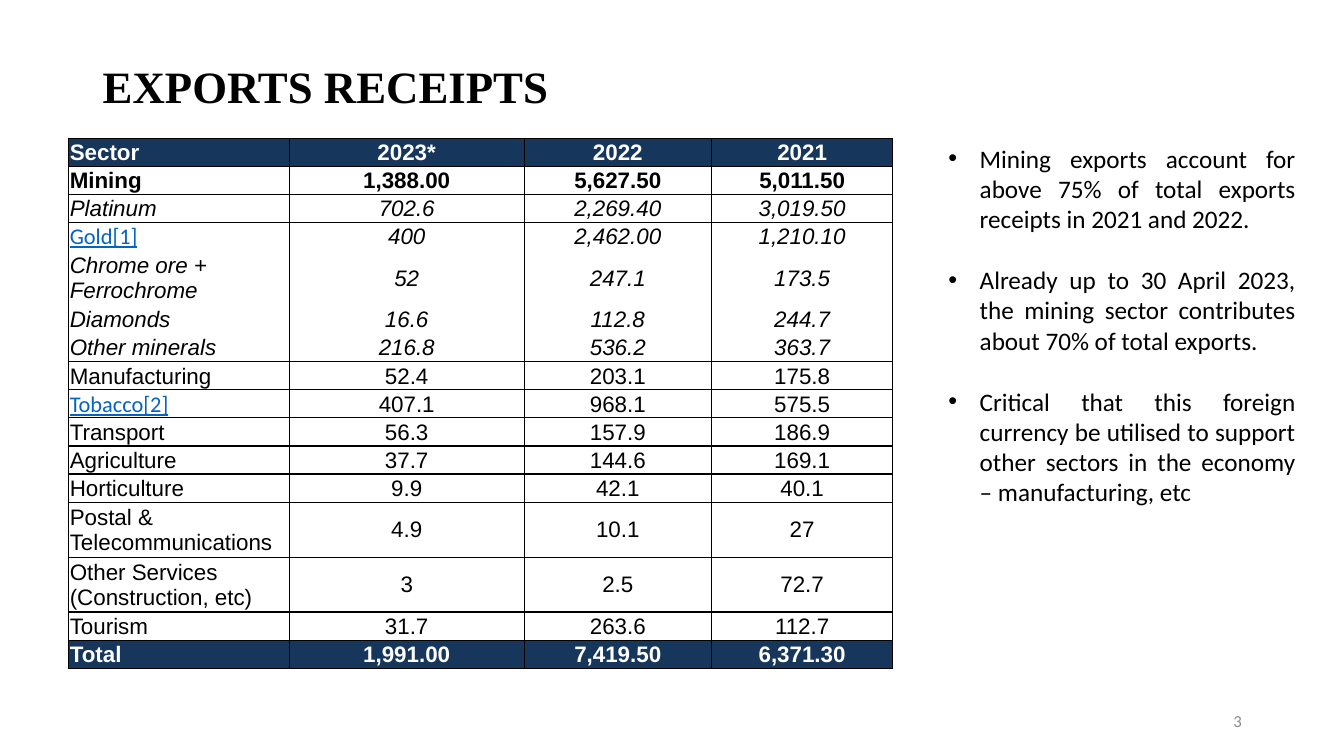
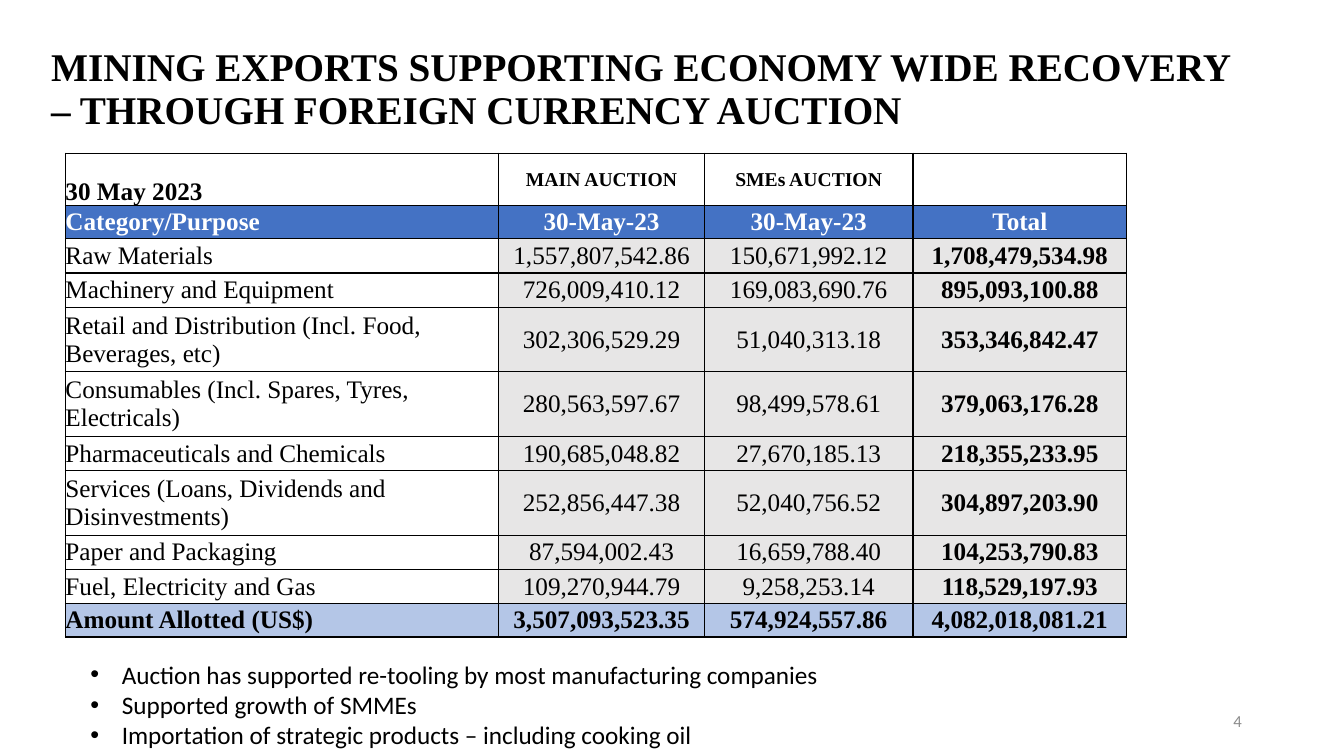
"""Build two slides on export receipts and the foreign currency auction."""
from dataclasses import dataclass, replace
from functools import partial
from typing import NamedTuple, Optional

from lxml.etree import SubElement
from pptx import Presentation
from pptx.dml.color import RGBColor
from pptx.enum.text import MSO_ANCHOR as Anchor, PP_ALIGN as Align
from pptx.oxml.ns import qn
from pptx.util import Cm, Pt

BLACK, WHITE, GREY = "000000", "FFFFFF", "8C8C8C"
NAVY, BLUE, PALE_BLUE, PALE_GREY, LINK = "16365C", "4472C4", "B4C6E7", "E7E6E6", "0563C1"
SERIF, SANS, BODY = "Times New Roman", "Arial", "Calibri"
NO_TABLE_STYLE = "{2D5ABB26-0587-4C30-8999-92F81FD0307C}"


@dataclass(frozen=True)
class Style:
    font: str
    size: int
    color: str = BLACK
    bold: bool = False
    italic: bool = False
    underline: bool = False
    fill: Optional[str] = None
    anchor: Anchor = Anchor.MIDDLE


class Box(NamedTuple):
    left: float
    top: float
    width: float
    height: float


class Row(NamedTuple):
    label: str
    values: tuple[str, ...]
    height: float
    style: Style
    label_style: Optional[Style] = None
    last_style: Optional[Style] = None
    edges: str = "LRTB"


class TableLayout(NamedTuple):
    left: float
    top: float
    columns: tuple[float, ...]
    inset: float
    rows: tuple[Row, ...]


PAGE_NUMBER_BOX = Box(23.93, 17.65, 7.62, 1.02)
PAGE_NUMBER = Style(BODY, 12, GREY)
BULLET = Style(BODY, 18, anchor=Anchor.TOP)

SECTOR = Style(SANS, 16)
SECTOR_BAND = replace(SECTOR, color=WHITE, bold=True, fill=NAVY)
MINERAL = replace(SECTOR, italic=True)
FOOTNOTE_LABEL = Style(BODY, 16, LINK, underline=True)
SINGLE, DOUBLE = 0.62, 1.14
sector = partial(Row, height=SINGLE, style=SECTOR)
sector_band = partial(sector, style=SECTOR_BAND)
mineral = partial(sector, style=MINERAL, edges="LR")

EXPORTS = TableLayout(1.73, 3.48, (5.56, 5.92, 4.72, 4.57), 0.03, (
    sector_band("Sector", ("2023*", "2022", "2021")),
    sector("Mining", ("1,388.00", "5,627.50", "5,011.50"), style=replace(SECTOR, bold=True)),
    mineral("Platinum", ("702.6", "2,269.40", "3,019.50"), edges="LRT"),
    mineral("Gold[1]", ("400", "2,462.00", "1,210.10"), label_style=FOOTNOTE_LABEL),
    mineral("Chrome ore + Ferrochrome", ("52", "247.1", "173.5"), height=DOUBLE),
    mineral("Diamonds", ("16.6", "112.8", "244.7")),
    mineral("Other minerals", ("216.8", "536.2", "363.7"), edges="LRB"),
    sector("Manufacturing", ("52.4", "203.1", "175.8")),
    sector("Tobacco[2]", ("407.1", "968.1", "575.5"), label_style=FOOTNOTE_LABEL),
    sector("Transport", ("56.3", "157.9", "186.9")),
    sector("Agriculture", ("37.7", "144.6", "169.1")),
    sector("Horticulture", ("9.9", "42.1", "40.1")),
    sector("Postal & Telecommunications", ("4.9", "10.1", "27"), height=DOUBLE),
    sector("Other Services (Construction, etc)", ("3", "2.5", "72.7"), height=DOUBLE),
    sector("Tourism", ("31.7", "263.6", "112.7")),
    sector_band("Total", ("1,991.00", "7,419.50", "6,371.30")),
))

PURPOSE = Style(SERIF, 18)
AMOUNT = replace(PURPOSE, fill=PALE_GREY)
HEADING = replace(PURPOSE, bold=True)
purpose = partial(Row, height=0.86, style=AMOUNT, label_style=PURPOSE,
                  last_style=replace(AMOUNT, bold=True))
long_purpose = partial(purpose, height=1.63)

AUCTION = TableLayout(1.65, 3.86, (10.92, 5.18, 5.26, 5.38), 0, (
    Row("30 May 2023", ("MAIN AUCTION", "SMEs AUCTION", ""), 1.32,
        replace(HEADING, size=14, fill=WHITE), replace(HEADING, anchor=Anchor.BOTTOM)),
    Row("Category/Purpose", ("30-May-23", "30-May-23", "Total"), 0.84,
        replace(HEADING, color=WHITE, fill=BLUE)),
    purpose("Raw Materials", ("1,557,807,542.86", "150,671,992.12", "1,708,479,534.98")),
    purpose("Machinery and Equipment", ("726,009,410.12", "169,083,690.76", "895,093,100.88")),
    long_purpose("Retail and Distribution (Incl. Food, Beverages, etc)",
                 ("302,306,529.29", "51,040,313.18", "353,346,842.47")),
    long_purpose("Consumables (Incl. Spares, Tyres, Electricals)",
                 ("280,563,597.67", "98,499,578.61", "379,063,176.28")),
    purpose("Pharmaceuticals and Chemicals",
            ("190,685,048.82", "27,670,185.13", "218,355,233.95")),
    long_purpose("Services (Loans, Dividends and Disinvestments)",
                 ("252,856,447.38", "52,040,756.52", "304,897,203.90")),
    purpose("Paper and Packaging", ("87,594,002.43", "16,659,788.40", "104,253,790.83")),
    purpose("Fuel, Electricity and Gas", ("109,270,944.79", "9,258,253.14", "118,529,197.93")),
    Row("Amount Allotted (US$)", ("3,507,093,523.35", "574,924,557.86", "4,082,018,081.21"),
        0.84, replace(HEADING, fill=PALE_BLUE)),
))


def rgb(color: str) -> RGBColor:
    return RGBColor.from_string(color)


def add_run(paragraph, text: str, style: Style) -> None:
    run = paragraph.add_run()
    run.text = text
    font = run.font
    font.name, font.size = style.font, Pt(style.size)
    font.bold, font.italic, font.underline = style.bold, style.italic, style.underline
    font.color.rgb = rgb(style.color)


def add_text_frame(slide, box: Box, anchor: Anchor):
    text_frame = slide.shapes.add_textbox(*map(Cm, box)).text_frame
    text_frame.word_wrap = True
    text_frame.vertical_anchor = anchor
    return text_frame


def add_line(slide, box: Box, text: str, style: Style, align: Align = Align.LEFT,
             line_spacing: float = 1.0) -> None:
    paragraph = add_text_frame(slide, box, style.anchor).paragraphs[0]
    paragraph.alignment, paragraph.line_spacing = align, line_spacing
    add_run(paragraph, text, style)


def add_bullets(slide, box: Box, texts: tuple[str, ...], align: Align = Align.LEFT,
                gap: int = 0) -> None:
    text_frame = add_text_frame(slide, box, BULLET.anchor)
    for index, text in enumerate(texts):
        paragraph = text_frame.add_paragraph() if index else text_frame.paragraphs[0]
        paragraph.alignment = align
        paragraph.space_before = Pt(gap if index else 0)
        properties = paragraph._p.get_or_add_pPr()
        properties.set("marL", str(Cm(0.79)))
        properties.set("indent", str(Cm(-0.79)))
        SubElement(properties, qn("a:buFont"), typeface=SANS)
        SubElement(properties, qn("a:buChar"), char="•")
        add_run(paragraph, text, BULLET)


def add_borders(cell, edges: str) -> None:
    properties = cell._tc.get_or_add_tcPr()
    for edge in edges:
        line = SubElement(properties, qn(f"a:ln{edge}"), w=str(Pt(1)))
        SubElement(SubElement(line, qn("a:solidFill")), qn("a:srgbClr"), val=BLACK)


def fill_cell(cell, text: str, style: Style, align: Align, edges: str, inset: float) -> None:
    cell.margin_left = cell.margin_right = cell.margin_top = Cm(inset)
    cell.margin_bottom = Cm(0)
    cell.vertical_anchor = style.anchor
    add_borders(cell, edges)
    if style.fill:
        cell.fill.solid()
        cell.fill.fore_color.rgb = rgb(style.fill)
    else:
        cell.fill.background()
    paragraph = cell.text_frame.paragraphs[0]
    paragraph.alignment = align
    if text:
        add_run(paragraph, text, style)


def add_data_table(slide, layout: TableLayout) -> None:
    height = sum(row.height for row in layout.rows)
    table = slide.shapes.add_table(
        len(layout.rows), len(layout.columns),
        Cm(layout.left), Cm(layout.top), Cm(sum(layout.columns)), Cm(height)).table
    table.first_row = table.horz_banding = False
    table._tbl.tblPr.find(qn("a:tableStyleId")).text = NO_TABLE_STYLE
    for column, width in zip(table.columns, layout.columns):
        column.width = Cm(width)
    last = len(layout.columns) - 1
    for row_index, row in enumerate(layout.rows):
        table.rows[row_index].height = Cm(row.height)
        special = {0: row.label_style, last: row.last_style}
        for column_index, text in enumerate((row.label, *row.values)):
            fill_cell(table.cell(row_index, column_index), text,
                      special.get(column_index) or row.style,
                      Align.CENTER if column_index else Align.LEFT, row.edges, layout.inset)


def add_page(presentation, number: int, title: str, title_box: Box, title_size: int,
             layout: TableLayout):
    slide = presentation.slides.add_slide(presentation.slide_layouts[6])
    add_line(slide, title_box, title, Style(SERIF, title_size, bold=True), line_spacing=0.9)
    add_data_table(slide, layout)
    add_line(slide, PAGE_NUMBER_BOX, str(number), PAGE_NUMBER, Align.RIGHT)
    return slide


def main() -> None:
    presentation = Presentation()
    presentation.slide_width, presentation.slide_height = Cm(33.87), Cm(19.05)

    receipts = add_page(presentation, 3, "EXPORTS RECEIPTS",
                        Box(2.34, 1.02, 29.21, 2.46), 32, EXPORTS)
    add_bullets(receipts, Box(23.65, 3.48, 9.25, 9.5), (
        "Mining exports account for above 75% of total exports receipts in 2021 and 2022.",
        "Already up to 30 April 2023, the mining sector contributes about 70% of total exports.",
        "Critical that this foreign currency be utilised to support other sectors in the "
        "economy – manufacturing, etc",
    ), Align.JUSTIFY, gap=22)

    auction = add_page(
        presentation, 4,
        "MINING EXPORTS SUPPORTING ECONOMY WIDE RECOVERY – THROUGH FOREIGN CURRENCY AUCTION",
        Box(1.04, 1.02, 30.51, 2.51), 28, AUCTION)
    add_bullets(auction, Box(2.03, 16.48, 26.77, 2.57), (
        "Auction has supported re-tooling by most manufacturing companies",
        "Supported growth of SMMEs",
        "Importation of strategic products – including cooking oil",
    ))

    presentation.save("out.pptx")


if __name__ == "__main__":
    main()
